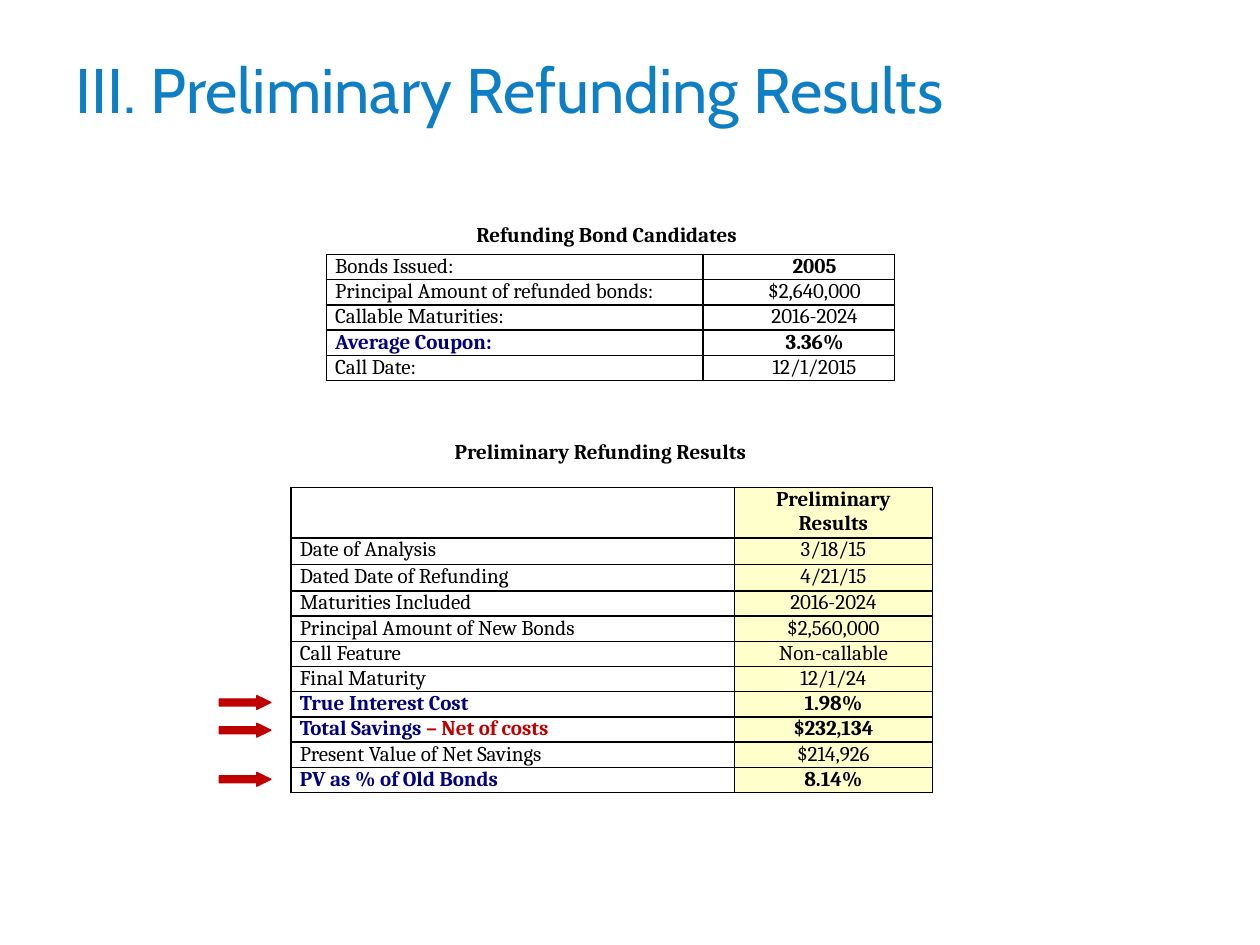
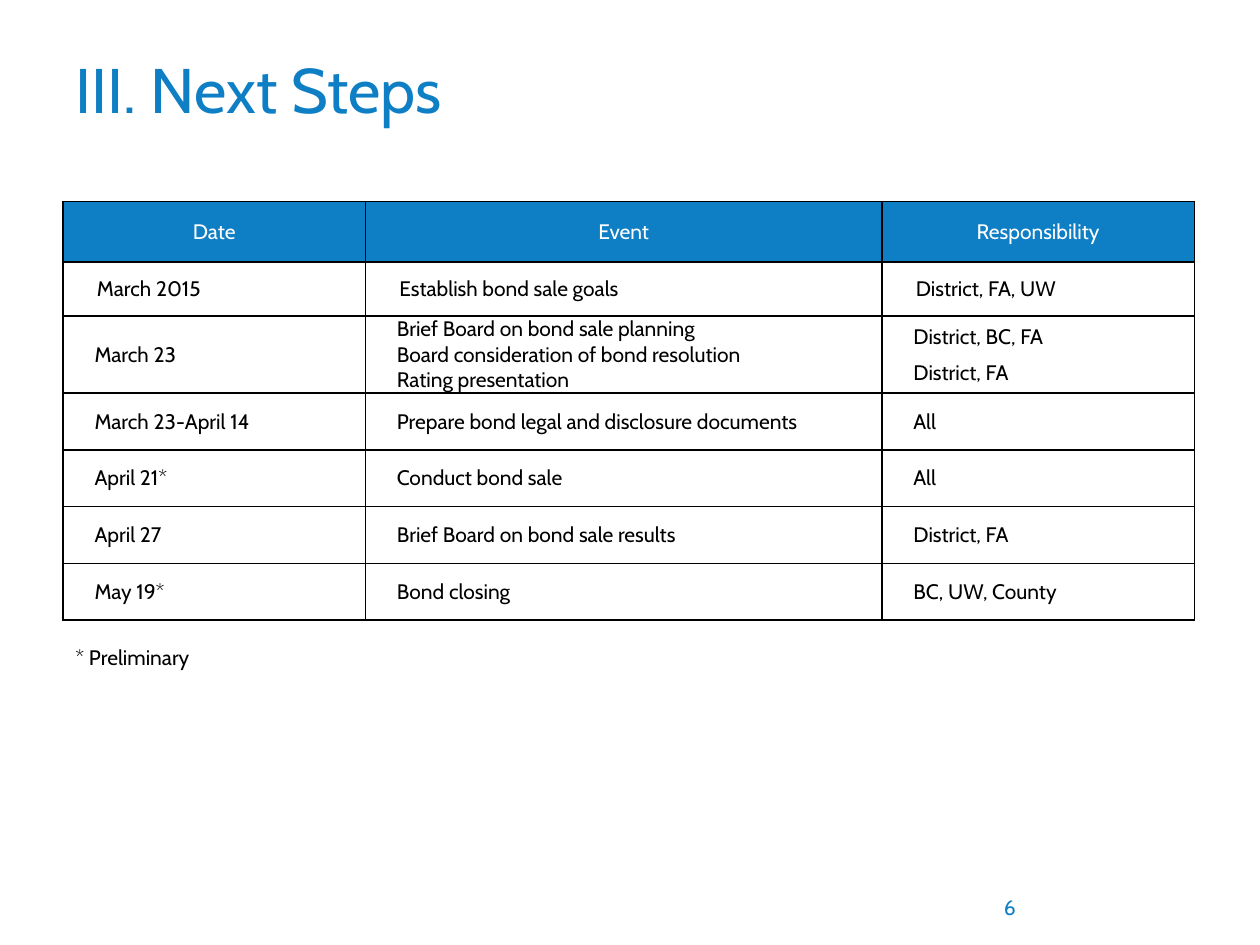
import pptx
import pptx.dml.color
import pptx.enum.shapes
import pptx.enum.text
import pptx.oxml
import pptx.oxml.ns
import pptx.util

Inches = pptx.util.Inches
Align = pptx.enum.text.PP_ALIGN
Anchor = pptx.enum.text.MSO_ANCHOR

COLORS = {
    "blue": "0F7FC5",
    "navy": "000080",
    "red": "C00000",
    "cream": "FFFFCC",
    "black": "000000",
    "white": "FFFFFF",
}
SANS, SERIF = "Cabin", "Cambria"
LAYOUT_CONTENT, LAYOUT_TITLE_ONLY = 1, 5


def rgb(name):
    return pptx.dml.color.RGBColor.from_string(COLORS[name])


# Text
def add_text(frame, text, font=SANS, size=12, color="black", bold=False,
             align=Align.LEFT, indent=0, space_before=0):
    """Add a paragraph; text is a string or a list of (text, color) spans."""
    para = frame.paragraphs[0]
    if para.runs:
        para = frame.add_paragraph()
    properties = para._p.get_or_add_pPr()
    properties.set("marL", str(Inches(indent)))
    properties.set("indent", "0")
    properties.append(pptx.oxml.parse_xml(
        f'<a:buNone {pptx.oxml.ns.nsdecls("a")}/>'))
    para.alignment = align
    para.space_before = pptx.util.Pt(space_before)
    spans = [(text, color)] if isinstance(text, str) else text
    for span_text, span_color in spans:
        span = para.add_run()
        span.text = span_text
        span.font.name = font
        span.font.size = pptx.util.Pt(size)
        span.font.bold = bold
        span.font.color.rgb = rgb(span_color)


def place(box, left, top, width, height, anchor=Anchor.MIDDLE):
    box.left, box.top = Inches(left), Inches(top)
    box.width, box.height = Inches(width), Inches(height)
    frame = box.text_frame
    frame.word_wrap = True
    frame.auto_size = pptx.enum.text.MSO_AUTO_SIZE.NONE
    frame.vertical_anchor = anchor
    return frame


def add_box(page, left, top, width, height, text, anchor=Anchor.MIDDLE, **style):
    box = page.shapes.add_textbox(0, 0, 0, 0)
    add_text(place(box, left, top, width, height, anchor), text, **style)


def add_page(deck, layout, title):
    page = deck.slides.add_slide(deck.slide_layouts[layout])
    frame = place(page.shapes.title, 0.5, 0.08, 8.29, 1.25)
    add_text(frame, title, size=36, color="blue")
    return page


# Tables
def add_grid(page, left, top, widths, heights):
    grid = page.shapes.add_table(
        len(heights), len(widths), Inches(left), Inches(top),
        Inches(sum(widths)), Inches(sum(heights))).table
    grid.first_row = grid.horz_banding = False
    for column, width in zip(grid.columns, widths):
        column.width = Inches(width)
    for row, height in zip(grid.rows, heights):
        row.height = Inches(height)
    return grid


def fill_cell(cell, lines, fill=None, inset=0.07, anchor=Anchor.TOP,
              line_gap=0, **style):
    cell.margin_left = cell.margin_right = Inches(inset)
    cell.margin_top = cell.margin_bottom = 0
    cell.vertical_anchor = anchor
    borders = cell._tc.get_or_add_tcPr()
    for side in "LRTB":
        borders.append(pptx.oxml.parse_xml(
            f'<a:ln{side} {pptx.oxml.ns.nsdecls("a")} w="12700"><a:solidFill>'
            f'<a:srgbClr val="{COLORS["black"]}"/></a:solidFill></a:ln{side}>'))
    if fill:
        cell.fill.solid()
        cell.fill.fore_color.rgb = rgb(fill)
    else:
        cell.fill.background()
    for number, line in enumerate(lines):
        add_text(cell.text_frame, line, space_before=line_gap if number else 0,
                 **style)


def add_figures(page, left, top, widths, heights, rows, fill=None, indent=0):
    """Table of labels and centred values; each row is label, value, styles."""
    grid = add_grid(page, left, top, widths, heights)
    for number, (label, value, label_style, value_style) in enumerate(rows):
        fill_cell(grid.cell(number, 0), [label], font=SERIF, **label_style)
        fill_cell(grid.cell(number, 1), [value], font=SERIF, fill=fill,
                  align=Align.CENTER, indent=indent, **value_style)


def plain(label, value):
    return label, value, {}, {}


def strong(label, value):
    return label, value, {}, {"bold": True}


def key(label, value):
    return label, value, {"bold": True, "color": "navy"}, {"bold": True}


def add_schedule(page, left, top, widths, heights, header, rows):
    grid = add_grid(page, left, top, widths, heights)
    for column, heading in enumerate(header):
        fill_cell(grid.cell(0, column), [heading], fill="blue", color="white",
                  anchor=Anchor.MIDDLE, align=Align.CENTER)
    for number, row in enumerate(rows, start=1):
        for column, content in enumerate(row):
            lines = content if isinstance(content, list) else [content]
            fill_cell(grid.cell(number, column), lines, indent=0.2,
                      inset=0.07 if number == 1 else 0.05,
                      anchor=Anchor.MIDDLE, line_gap=6 if column == 2 else 0)


# Markers
def add_arrow(page, top):
    arrow = page.shapes.add_shape(
        pptx.enum.shapes.MSO_SHAPE.RIGHT_ARROW,
        Inches(1.74), Inches(top), Inches(0.41), Inches(0.11))
    arrow.adjustments[0], arrow.adjustments[1] = 0.5, 1.02
    arrow.shadow.inherit = False
    arrow.fill.solid()
    arrow.fill.fore_color.rgb = rgb("red")
    arrow.line.color.rgb = rgb("red")
    arrow.line.width = pptx.util.Pt(0.75)


# Slides
def build_results(deck):
    page = add_page(deck, LAYOUT_CONTENT, "III. Preliminary Refunding Results")
    caption = place(page.placeholders[1], 2.75, 1.71, 4.13, 0.3)
    add_text(caption, "Refunding Bond Candidates", font=SERIF, bold=True,
             align=Align.CENTER)
    candidates = [
        strong("Bonds Issued:", "2005"),
        plain("Principal Amount of refunded bonds:", "$2,640,000"),
        plain("Callable Maturities:", "2016-2024"),
        key("Average Coupon:", "3.36%"),
        plain("Call Date:", "12/1/2015"),
    ]
    add_figures(page, 2.59, 2.02, [2.99, 1.52], [0.2] * 5, candidates,
                indent=0.25)

    add_box(page, 3.51, 3.43, 3.47, 0.3, "Preliminary Refunding Results",
            font=SERIF, bold=True)
    savings = [("Total Savings ", "navy"), ("– Net of costs", "red")]
    results = [
        strong("", "Preliminary Results"),
        plain("Date of Analysis", "3/18/15"),
        plain("Dated Date of Refunding", "4/21/15"),
        plain("Maturities Included", "2016-2024"),
        plain("Principal Amount of New Bonds", "$2,560,000"),
        plain("Call Feature", "Non-callable"),
        plain("Final Maturity", "12/1/24"),
        key("True Interest Cost", "1.98%"),
        key(savings, "$232,134"),
        plain("Present Value of Net Savings", "$214,926"),
        key("PV as % of Old Bonds", "8.14%"),
    ]
    add_figures(page, 2.31, 3.87, [3.52, 1.57], [0.4, 0.21, 0.21] + [0.2] * 8,
                results, fill="cream")
    for top in (5.52, 5.74, 6.13):
        add_arrow(page, top)


def build_next_steps(deck):
    page = add_page(deck, LAYOUT_TITLE_ONLY, "III. Next Steps")
    add_box(page, 5.83, 7, 2.33, 0.4, "6", color="blue", align=Align.RIGHT)
    steps = [
        ("March 2015", "Establish bond sale goals", "District, FA, UW"),
        ("March 23",
         ["Brief Board on bond sale planning",
          "Board consideration of bond resolution",
          "Rating presentation"],
         ["District, BC, FA", "District, FA"]),
        ("March 23-April 14", "Prepare bond legal and disclosure documents",
         "All"),
        ("April 21*", "Conduct bond sale", "All"),
        ("April 27", "Brief Board on bond sale results", "District, FA"),
        ("May 19*", "Bond closing", "BC, UW, County"),
    ]
    add_schedule(page, 0.5, 1.6, [2.4, 4.1, 2.48],
                 [0.48, 0.43, 0.61] + [0.45] * 4,
                 ["Date", "Event", "Responsibility"], steps)
    add_box(page, 0.5, 5.07, 2.67, 0.3, "* Preliminary", anchor=Anchor.TOP)


def main():
    deck = pptx.Presentation()
    deck.slide_width, deck.slide_height = Inches(10), Inches(7.5)
    build_results(deck)
    build_next_steps(deck)
    deck.save("out.pptx")


if __name__ == "__main__":
    main()
